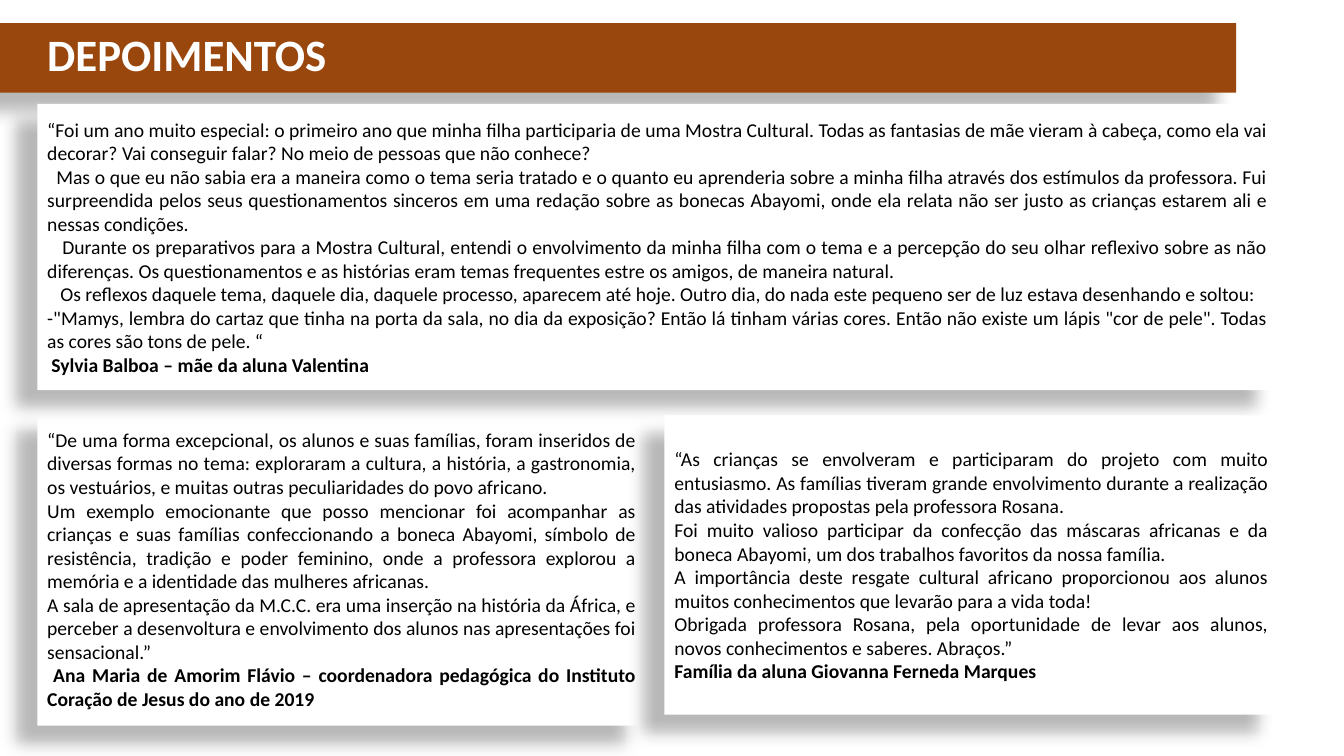
"""Build the DEPOIMENTOS slide with three testimonial cards."""
from lxml.etree import SubElement
from pptx import Presentation
from pptx.dml.color import RGBColor
from pptx.enum.shapes import MSO_SHAPE
from pptx.enum.text import MSO_ANCHOR, PP_ALIGN
from pptx.oxml.ns import qn
from pptx.util import Inches, Pt

FONT = "Calibri"
COLORS = {"band": "9A470E", "card": "FFFFFF", "title": "FFFFFF", "text": "000000", "shadow": "000000"}

COORDINATOR = [
    ("“De uma forma excepcional, os alunos e suas famílias, foram inseridos de diversas formas no tema: "
     "exploraram a cultura, a história, a gastronomia, os vestuários, e muitas outras peculiaridades do "
     "povo africano.", 0),
    ("Um exemplo emocionante que posso mencionar foi acompanhar as crianças e suas famílias "
     "confeccionando a boneca Abayomi, símbolo de resistência, tradição e poder feminino, onde a "
     "professora explorou a memória e a identidade das mulheres africanas.", 0),
    ("A sala de apresentação da M.C.C. era uma inserção na história da África, e perceber a desenvoltura "
     "e envolvimento dos alunos nas apresentações foi sensacional.”", 0),
    ("Ana Maria de Amorim Flávio – coordenadora pedagógica do Instituto Coração de Jesus do ano de 2019",
     0.06),
]
MOTHER = [
    ("“Foi um ano muito especial: o primeiro ano que minha filha participaria de uma Mostra Cultural. "
     "Todas as fantasias de mãe vieram à cabeça, como ela vai decorar? Vai conseguir falar? No meio de "
     "pessoas que não conhece?", 0),
    ("Mas o que eu não sabia era a maneira como o tema seria tratado e o quanto eu aprenderia sobre a "
     "minha filha através dos estímulos da professora. Fui surpreendida pelos seus questionamentos "
     "sinceros em uma redação sobre as bonecas Abayomi, onde ela relata não ser justo as crianças "
     "estarem ali e nessas condições.", 0.09),
    ("Durante os preparativos para a Mostra Cultural, entendi o envolvimento da minha filha com o tema e "
     "a percepção do seu olhar reflexivo sobre as não diferenças. Os questionamentos e as histórias eram "
     "temas frequentes estre os amigos, de maneira natural.", 0.15),
    ("Os reflexos daquele tema, daquele dia, daquele processo, aparecem até hoje. Outro dia, do nada este "
     "pequeno ser de luz estava desenhando e soltou:", 0.13),
    ("-\"Mamys, lembra do cartaz que tinha na porta da sala, no dia da exposição? Então lá tinham várias "
     "cores. Então não existe um lápis \"cor de pele\". Todas as cores são tons de pele. “", 0),
    ("Sylvia Balboa – mãe da aluna Valentina", 0.04),
]
FAMILY = [
    ("“As crianças se envolveram e participaram do projeto com muito entusiasmo. As famílias tiveram "
     "grande envolvimento durante a realização das atividades propostas pela professora Rosana.", 0),
    ("Foi muito valioso participar da confecção das máscaras africanas e da boneca Abayomi, um dos "
     "trabalhos favoritos da nossa família.", 0),
    ("A importância deste resgate cultural africano proporcionou aos alunos muitos conhecimentos que "
     "levarão para a vida toda!", 0),
    ("Obrigada professora Rosana, pela oportunidade de levar aos alunos, novos conhecimentos e saberes. "
     "Abraços.”", 0),
    ("Família da aluna Giovanna Ferneda Marques", 0),
]


def style_font(p, size, color, bold):
    """Format every run of a paragraph."""
    for r in p.runs:
        r.font.name = FONT
        r.font.size = Pt(size)
        r.font.bold = bold
        r.font.color.rgb = RGBColor.from_string(COLORS[color])


def add_shadow(sp):
    """Cast a soft shadow to the lower left."""
    sp.shadow.inherit = False
    effects = sp._element.spPr.find(qn("a:effectLst"))
    shadow = SubElement(effects, qn("a:outerShdw"), blurRad=str(Pt(11.8)), dist=str(Pt(19.7)),
                        dir=str(141 * 60000), algn="ctr", rotWithShape="0")
    color = SubElement(shadow, qn("a:srgbClr"), val=COLORS["shadow"])
    SubElement(color, qn("a:alpha"), val="28000")


def add_panel(s, box, fill):
    """Add a borderless rectangle with a shadow."""
    sp = s.shapes.add_shape(MSO_SHAPE.RECTANGLE, *map(Inches, box))
    sp.fill.solid()
    sp.fill.fore_color.rgb = RGBColor.from_string(COLORS[fill])
    sp.line.fill.background()
    add_shadow(sp)
    return sp


def add_title(s, text):
    """Add the heading over its band."""
    add_panel(s, (0, 0.23, 12.26, 0.69), "band")
    tf = s.shapes.add_textbox(*map(Inches, (0.37, 0.29, 10, 0.56))).text_frame
    tf.word_wrap = True
    tf.vertical_anchor = MSO_ANCHOR.MIDDLE
    tf.text = text
    tf.paragraphs[0].line_spacing = 0.9
    style_font(tf.paragraphs[0], 32, "title", True)


def add_testimonial(s, box, paragraphs):
    """Add a card of justified paragraphs ending in a bold signature."""
    tf = add_panel(s, box, "card").text_frame
    tf.word_wrap = True
    tf.vertical_anchor = MSO_ANCHOR.MIDDLE
    tf.text = "\n".join(text for text, _ in paragraphs)
    signature = len(paragraphs) - 1
    for i, (p, (_, indent)) in enumerate(zip(tf.paragraphs, paragraphs)):
        p.alignment = PP_ALIGN.JUSTIFY
        if indent:
            p._p.get_or_add_pPr().set("indent", str(Inches(indent)))
        style_font(p, 14, "text", i == signature)


def main():
    """Build and save the slide."""
    prs = Presentation()
    prs.slide_width, prs.slide_height = Inches(13.33), Inches(7.5)
    s = prs.slides.add_slide(prs.slide_layouts[6])
    add_title(s, "DEPOIMENTOS")
    add_testimonial(s, (0.37, 4.09, 6.04, 3.11), COORDINATOR)
    add_testimonial(s, (0.37, 1.03, 12.31, 2.84), MOTHER)
    add_testimonial(s, (6.59, 4.12, 6.09, 2.97), FAMILY)
    prs.save("out.pptx")


if __name__ == "__main__":
    main()
